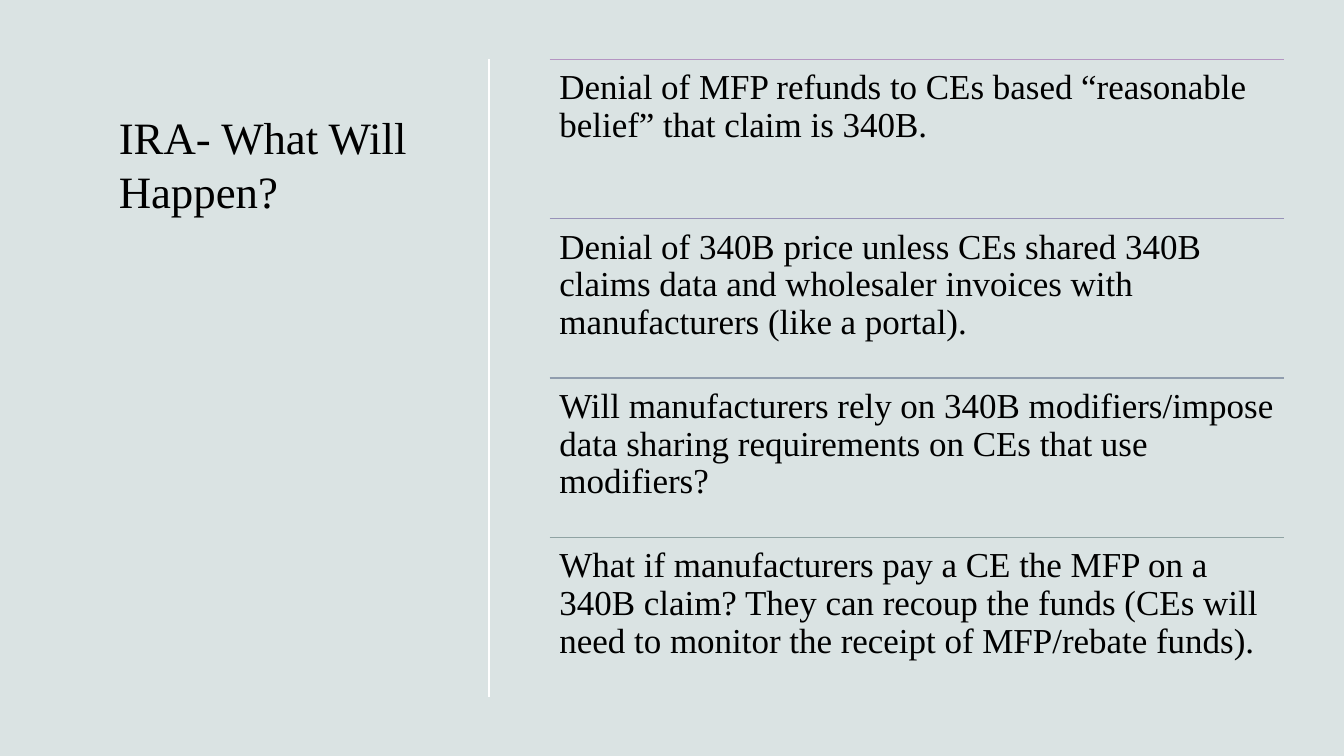
from lxml.etree import SubElement
from pptx import Presentation
from pptx.dml.color import RGBColor as RGB
from pptx.enum.shapes import MSO_CONNECTOR as Link
from pptx.enum.text import MSO_ANCHOR as Anchor
from pptx.oxml.ns import qn
from pptx.util import Inches, Pt

MIST = RGB(0xDA, 0xE3, 0xE3)
BLACK = RGB(0, 0, 0)
WHITE = RGB(0xFF, 0xFF, 0xFF)
MAUVE = RGB(0xB4, 0x95, 0xC2)
LILAC = RGB(0x97, 0x92, 0xB8)
SLATE = RGB(0x90, 0x9D, 0xAE)
SAGE = RGB(0x8F, 0xA3, 0xA3)

POINTS = [
    (MAUVE, "Denial of MFP refunds to CEs based “reasonable belief” that claim is 340B."),
    (LILAC, "Denial of 340B price unless CEs shared 340B claims data and wholesaler "
            "invoices with manufacturers (like a portal)."),
    (SLATE, "Will manufacturers rely on 340B modifiers/impose data sharing "
            "requirements on CEs that use modifiers?"),
    (SAGE, "What if manufacturers pay a CE the MFP on a 340B claim? They can recoup "
           "the funds (CEs will need to monitor the receipt of MFP/rebate funds)."),
]
TOP, LEFT, WIDTH, STEP = 0.59, 5.45, 7.29, 1.58


class Page:
    """Hold the text style and the slide being built."""

    def __init__(self, slide):
        self.slide = slide
        self.face = "Times New Roman"
        fill = slide.background.fill
        fill.solid()
        fill.fore_color.rgb = MIST

    def line(self, x1, y1, x2, y2, color, weight):
        ends = [Inches(v) for v in (x1, y1, x2, y2)]
        rule = self.slide.shapes.add_connector(Link.STRAIGHT, *ends)
        rule.line.color.rgb = color
        rule.line.width = Pt(weight)
        SubElement(rule._element.spPr, qn("a:effectLst"))

    def text(self, x, y, width, height, words, size, inset, spacing):
        area = [Inches(v) for v in (x, y, width, height)]
        frame = self.slide.shapes.add_textbox(*area).text_frame
        frame.word_wrap = True
        frame.vertical_anchor = Anchor.TOP
        frame.margin_left = frame.margin_right = Inches(0.1)
        frame.margin_top = frame.margin_bottom = Inches(inset)
        par = frame.paragraphs[0]
        par.text = words
        par.line_spacing = spacing
        par.font.name = self.face
        par.font.size = Pt(size)
        par.font.color.rgb = BLACK


def main():
    deck = Presentation()
    deck.slide_width, deck.slide_height = Inches(13.33), Inches(7.5)
    page = Page(deck.slides.add_slide(deck.slide_layouts[6]))
    page.text(1.08, 1.04, 3.06, 5.13, "IRA- What Will Happen?", 32, 0.05, 1.0)
    page.line(4.85, TOP, 4.85, TOP + len(POINTS) * STEP, WHITE, 1)
    for row, (color, words) in enumerate(POINTS):
        y = TOP + row * STEP
        page.line(LEFT, y, LEFT + WIDTH, y, color, 0.75)
        page.text(LEFT, y, WIDTH, STEP, words, 25, 0.1, 0.9)
    deck.save("out.pptx")


if __name__ == "__main__":
    main()
